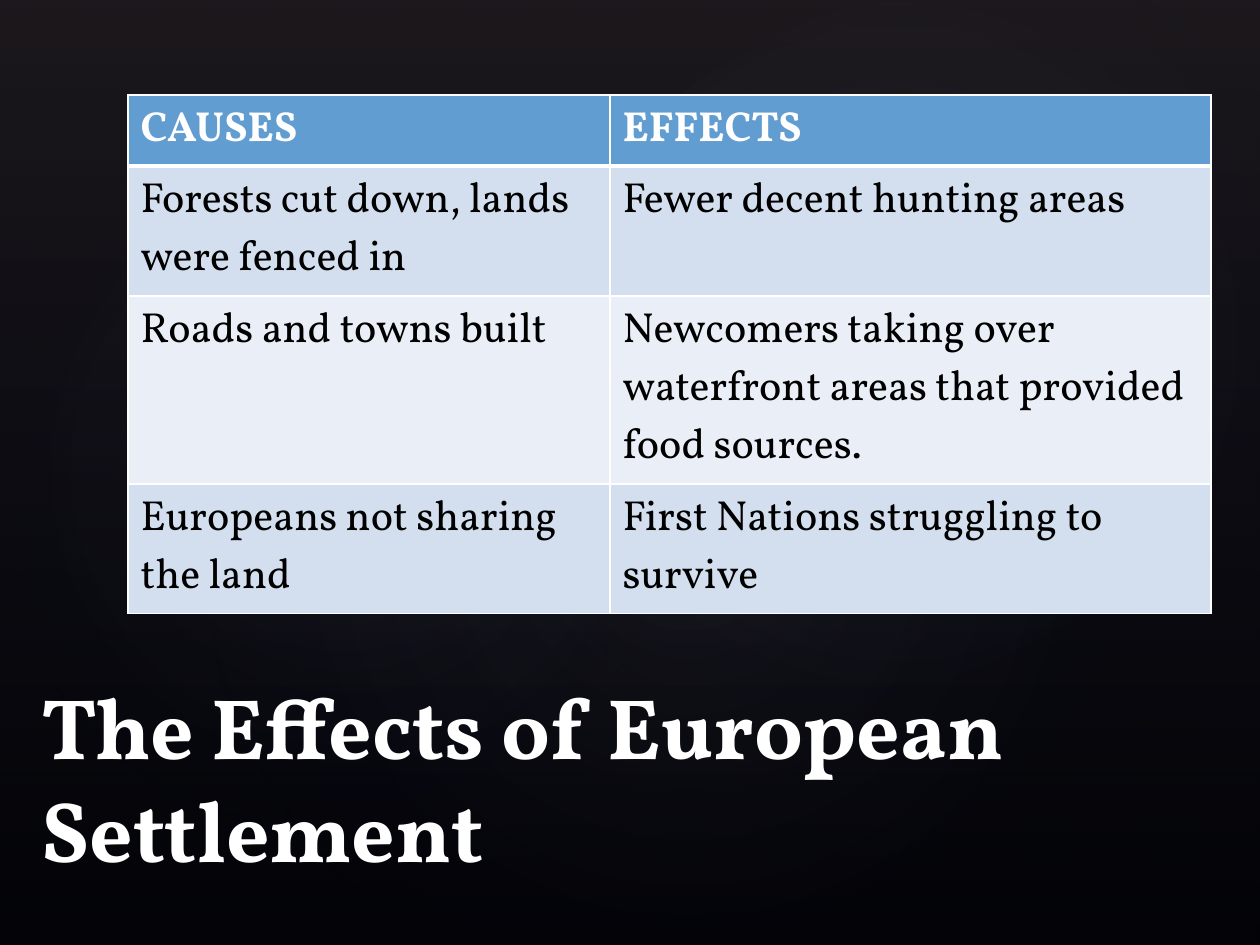
from lxml.etree import SubElement
from pptx import Presentation
from pptx.dml.color import RGBColor
from pptx.enum.shapes import MSO_SHAPE as Shape
from pptx.enum.text import MSO_ANCHOR as Anchor
from pptx.oxml.ns import qn
from pptx.util import Emu, Pt

EMU_PER_PX = 914400 / 126
FONT = "Vollkorn"
BLACK = RGBColor(0x00, 0x00, 0x00)
WHITE = RGBColor(0xFF, 0xFF, 0xFF)
HEADER_BLUE = RGBColor(0x62, 0x9D, 0xD1)
BAND_BLUE = RGBColor(0xD3, 0xDF, 0xEE)
BAND_PALE = RGBColor(0xEA, 0xEF, 0xF7)
HAZE = RGBColor(0x50, 0x46, 0x52)
GLOW = RGBColor(0xC4, 0xBC, 0xC6)
NAVY = RGBColor(0x24, 0x28, 0x52)

GLOWS = [
    ((189, 144, 998, 786), 328.7, 7),
    ((-38, 161, 764, 617), 294.3, 8),
    ((451, 16, 893, 655), 328.7, 8),
]
CAUSES_AND_EFFECTS = [
    ("CAUSES", "EFFECTS"),
    ("Forests cut down, lands were fenced in", "Fewer decent hunting areas"),
    ("Roads and towns built",
     "Newcomers taking over waterfront areas that provided food sources."),
    ("Europeans not sharing the land", "First Nations struggling to survive"),
]
COLUMN_WIDTHS = (482, 601)
ROW_HEIGHTS = (70, 130, 188, 129)


def px(length):
    """Turn pixels into EMU."""
    return Emu(round(length * EMU_PER_PX))


def add_run(paragraph, text, size, color, bold):
    """Append one styled run to a paragraph."""
    run = paragraph.add_run()
    run.text = text
    run.font.name = FONT
    run.font.size = Pt(size)
    run.font.bold = bold
    run.font.color.rgb = color


def add_solid(parent, color):
    """Append a solid fill to an XML element and return its colour."""
    solid = SubElement(parent, qn("a:solidFill"))
    return SubElement(solid, qn("a:srgbClr"), val=str(color))


def add_veil(slide, kind, box, stops, radial=False, rotation=0):
    """Add a borderless shape filled with a translucent gradient."""
    veil = slide.shapes.add_shape(kind, *map(px, box))
    veil.rotation = rotation
    veil.shadow.inherit = False
    veil.line.fill.background()
    veil.fill.background()
    empty_fill = veil._element.spPr.find(qn("a:noFill"))
    gradient = empty_fill.makeelement(qn("a:gradFill"), {"rotWithShape": "1"})
    stop_list = SubElement(gradient, qn("a:gsLst"))
    for position, color, opacity in stops:
        stop = SubElement(stop_list, qn("a:gs"), pos=str(position * 1000))
        tint = SubElement(stop, qn("a:srgbClr"), val=str(color))
        SubElement(tint, qn("a:alpha"), val=str(opacity * 1000))
    if radial:
        focus = SubElement(gradient, qn("a:path"), path="circle")
        SubElement(focus, qn("a:fillToRect"),
                   {side: "50000" for side in "ltrb"})
    else:
        SubElement(gradient, qn("a:lin"), ang="5400000", scaled="0")
    empty_fill.getparent().replace(empty_fill, gradient)


def add_backdrop(slide, box):
    """Paint the black background, its haze and its soft glows."""
    slide.background.fill.solid()
    slide.background.fill.fore_color.rgb = BLACK
    add_veil(slide, Shape.RECTANGLE, box, [(0, HAZE, 36), (100, NAVY, 10)])
    left, top = box[:2]
    for (x, y, width, height), rotation, opacity in GLOWS:
        add_veil(slide, Shape.OVAL, (left + x, top + y, width, height),
                 [(0, GLOW, opacity), (58, NAVY, 0)], True, rotation)


def set_borders(cell, bottom_width):
    """Draw white lines on the four sides of a cell."""
    properties = cell._tc.get_or_add_tcPr()
    widths = {"lnL": 1, "lnR": 1, "lnT": 1, "lnB": bottom_width}
    for index, (side, width) in enumerate(widths.items()):
        border = properties.makeelement(qn(f"a:{side}"), {"w": str(Pt(width))})
        add_solid(border, WHITE)
        properties.insert(index, border)


def add_effects_table(slide, box):
    """Add the table of causes and effects."""
    table = slide.shapes.add_table(len(ROW_HEIGHTS), len(COLUMN_WIDTHS),
                                   *map(px, box)).table
    for column, width in zip(table.columns, COLUMN_WIDTHS):
        column.width = px(width)
    for index, (row, height) in enumerate(zip(table.rows, ROW_HEIGHTS)):
        row.height = px(height)
        header = index == 0
        band = HEADER_BLUE if header else BAND_BLUE if index % 2 else BAND_PALE
        for cell, text in zip(row.cells, CAUSES_AND_EFFECTS[index]):
            cell.fill.solid()
            cell.fill.fore_color.rgb = band
            set_borders(cell, 3 if header else 1)
            add_run(cell.text_frame.paragraphs[0], text, 24,
                    WHITE if header else BLACK, header)


def add_title(slide, box):
    """Add the slide title, resting on the bottom of its box."""
    title = slide.shapes.add_textbox(*map(px, box)).text_frame
    title.word_wrap = True
    title.vertical_anchor = Anchor.BOTTOM
    add_run(title.paragraphs[0], "The Effects of European Settlement",
            49, WHITE, True)


def main():
    """Build and save the slide."""
    deck = Presentation()
    deck.slide_width, deck.slide_height = px(1260), px(945)
    slide = deck.slides.add_slide(deck.slide_layouts[6])
    add_backdrop(slide, (0, 0, 1260, 945))
    add_effects_table(slide, (128, 95, sum(COLUMN_WIDTHS), sum(ROW_HEIGHTS)))
    add_title(slide, (29, 672, 1118, 214))
    deck.save("out.pptx")


if __name__ == "__main__":
    main()
